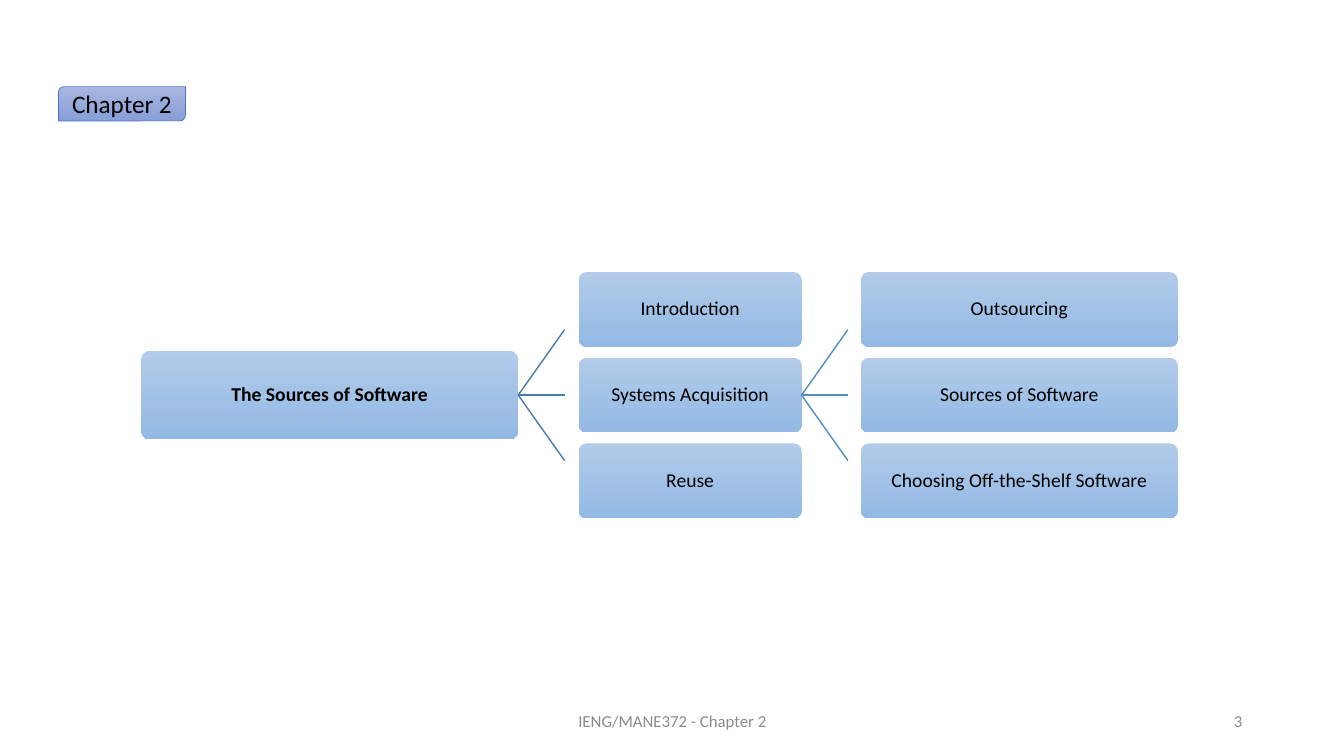
from lxml import etree
from pptx import Presentation
from pptx.dml.color import RGBColor
from pptx.enum import shapes, text
from pptx.oxml.ns import qn
from pptx.util import Inches, Pt

FONT = "Calibri"
BLACK, GREY = "000000", "8C8C8C"
NODE_FILL = ("B1CBE9", "93B9E4")
BADGE_FILL = ("A8B7DF", "889ED7")
MIDDLE = 3.92
ROW_PITCH = 0.85
NODE_HEIGHT = 0.74
BRANCH_WIDTH, BRANCH_RISE = 0.46, 0.65


def colour(value):
    return RGBColor.from_string(value)


def write(shape, words, size, ink=BLACK, bold=False, align=text.PP_ALIGN.CENTER):
    frame = shape.text_frame
    frame.word_wrap = True
    frame.vertical_anchor = text.MSO_ANCHOR.MIDDLE
    para = frame.paragraphs[0]
    para.alignment = align
    span = para.add_run()
    span.text = words
    for name, value in {"name": FONT, "size": Pt(size), "bold": bold}.items():
        setattr(span.font, name, value)
    span.font.color.rgb = colour(ink)


def add_box(page, kind, left, top, width, height, fills):
    """Add a preset shape with a top-to-bottom gradient and no line."""
    box = page.shapes.add_shape(
        kind, Inches(left), Inches(top), Inches(width), Inches(height))
    box.shadow.inherit = False
    box.fill.gradient()
    box.fill.gradient_angle = 270
    for stop, value in zip(box.fill.gradient_stops, fills):
        stop.color.rgb = colour(value)
    box.line.fill.background()
    return box


def add_node(page, words, left, width, row=0, height=NODE_HEIGHT, bold=False):
    """Add a rounded box, row steps below the middle of the tree."""
    top = MIDDLE + row * ROW_PITCH - height / 2
    box = add_box(page, shapes.MSO_SHAPE.ROUNDED_RECTANGLE,
                  left, top, width, height, NODE_FILL)
    box.adjustments[0] = 0.1
    for side in ("left", "top", "right", "bottom"):
        setattr(box.text_frame, f"margin_{side}", Inches(0.01))
    write(box, words, 14, bold=bold)
    box.text_frame.paragraphs[0].line_spacing = 0.9
    return box


def add_column(page, labels, left, width):
    return [add_node(page, words, left, width, row)
            for row, words in enumerate(labels, start=-1)]


def add_branches(page, parent, ink):
    """Fan three lines out from the right side of a box."""
    start = parent.left + parent.width
    for row in (-1, 0, 1):
        line = page.shapes.add_connector(
            shapes.MSO_CONNECTOR.STRAIGHT, start, Inches(MIDDLE),
            start + Inches(BRANCH_WIDTH), Inches(MIDDLE + row * BRANCH_RISE))
        line.begin_connect(parent, 3)
        line.line.color.rgb = colour(ink)
        line.line.width = Pt(1)
        etree.SubElement(line._element.spPr, qn("a:effectLst"))


def add_footer(page, words, left, width, align):
    box = page.shapes.add_textbox(
        Inches(left), Inches(6.95), Inches(width), Inches(0.4))
    write(box, words, 12, GREY, align=align)


def main():
    deck = Presentation()
    deck.slide_width, deck.slide_height = Inches(13.33), Inches(7.5)
    page = deck.slides.add_slide(deck.slide_layouts[6])

    badge = add_box(page, shapes.MSO_SHAPE.ROUND_2_DIAG_RECTANGLE,
                    0.58, 0.86, 1.26, 0.34, BADGE_FILL)
    badge.line.color.rgb = colour("4472C4")
    badge.line.width = Pt(0.5)
    write(badge, "Chapter 2", 18)

    root = add_node(page, "The Sources of Software", 1.4, 3.74,
                    height=0.88, bold=True)
    topics = add_column(
        page, ("Introduction", "Systems Acquisition", "Reuse"), 5.74, 2.21)
    add_column(page, ("Outsourcing", "Sources of Software",
                      "Choosing Off-the-Shelf Software"), 8.54, 3.14)
    add_branches(page, root, "497CAB")
    add_branches(page, topics[1], "538DC1")

    add_footer(page, "IENG/MANE372 - Chapter 2", 4.42, 4.5, text.PP_ALIGN.CENTER)
    add_footer(page, "3", 9.42, 3, text.PP_ALIGN.RIGHT)
    deck.save("out.pptx")


if __name__ == "__main__":
    main()
